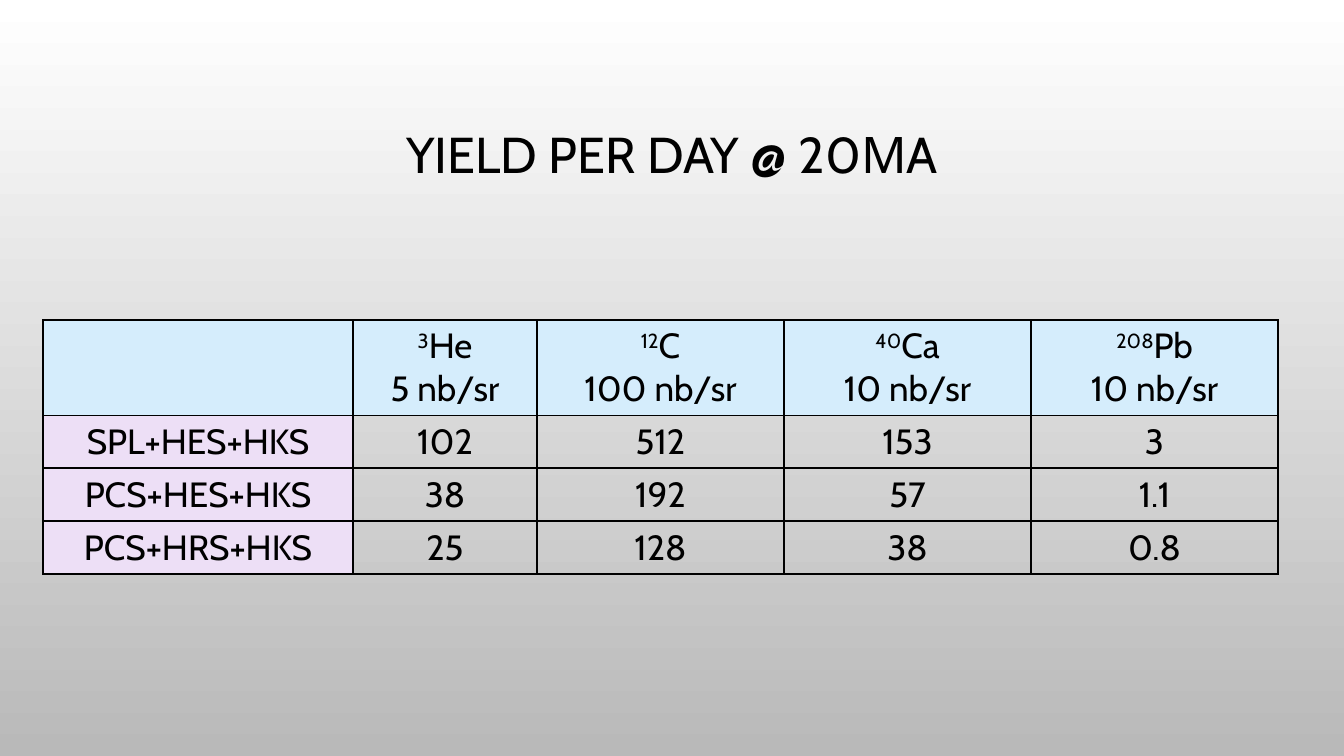
"""Build the slide on yield per day for four targets."""
from lxml.etree import SubElement
from pptx import Presentation
from pptx.dml.color import RGBColor
from pptx.enum.text import MSO_ANCHOR, PP_ALIGN
from pptx.oxml.ns import qn
from pptx.util import Emu, Pt

SLIDE_WIDTH, SLIDE_HEIGHT = 1344, 756
EMU_PER_PX = 12192000 / SLIDE_WIDTH
FONT = "Cabin"
BLACK = "000000"
HEADER_FILL, LABEL_FILL = "D5EDFC", "EDDFF6"
COLUMN_WIDTHS = [310, 184, 247, 247, 247]
HEADER_HEIGHT, ROW_HEIGHT = 95, 53
TARGETS = [
    ("3", "He", "5 nb/sr"),
    ("12", "C", "100 nb/sr"),
    ("40", "Ca", "10 nb/sr"),
    ("208", "Pb", "10 nb/sr"),
]
YIELDS = [
    ("SPL+HES+HKS", "102", "512", "153", "3"),
    ("PCS+HES+HKS", "38", "192", "57", "1.1"),
    ("PCS+HRS+HKS", "25", "128", "38", "0.8"),
]


def px(length):
    return Emu(round(length * EMU_PER_PX))


def color(value):
    return RGBColor.from_string(value)


def format_paragraph(paragraph, size):
    paragraph.alignment = PP_ALIGN.CENTER
    paragraph.font.size = Pt(size)
    paragraph.font.name = FONT
    paragraph.font.color.rgb = color(BLACK)


def set_background(slide):
    fill = slide.background.fill
    fill.gradient()
    fill.gradient_angle = 270
    for stop, value in zip(fill.gradient_stops, ("FFFFFF", "B9B9B9")):
        stop.color.rgb = color(value)


def set_title(slide, text):
    title = slide.shapes.title
    title.left, title.top, title.width, title.height = px(101), px(69), px(1142), px(176)
    frame = title.text_frame
    frame.text = text
    frame.vertical_anchor = MSO_ANCHOR.MIDDLE
    frame.paragraphs[0].line_spacing = 0.9
    format_paragraph(frame.paragraphs[0], 36)


def set_borders(cell):
    properties = cell._tc.get_or_add_tcPr()
    for side in ("a:lnL", "a:lnR", "a:lnT", "a:lnB"):
        line = SubElement(properties, qn(side), w=str(Pt(1)))
        SubElement(SubElement(line, qn("a:solidFill")), qn("a:srgbClr"), val=BLACK)


def style_cell(cell, fill=None):
    set_borders(cell)
    if fill:
        cell.fill.solid()
        cell.fill.fore_color.rgb = color(fill)
    else:
        cell.fill.background()
    cell.vertical_anchor = MSO_ANCHOR.MIDDLE
    for paragraph in cell.text_frame.paragraphs:
        format_paragraph(paragraph, 25)


def write_target(cell, mass, element, cross_section):
    frame = cell.text_frame
    superscript = frame.paragraphs[0].add_run()
    superscript.text = mass
    superscript._r.get_or_add_rPr().set("baseline", "30000")
    frame.paragraphs[0].add_run().text = element
    frame.add_paragraph().text = cross_section


def add_yield_table(slide):
    height = HEADER_HEIGHT + ROW_HEIGHT * len(YIELDS)
    table = slide.shapes.add_table(
        len(YIELDS) + 1, len(COLUMN_WIDTHS),
        px(43), px(320), px(sum(COLUMN_WIDTHS)), px(height),
    ).table
    table.first_row = table.horz_banding = False
    for column, width in zip(table.columns, COLUMN_WIDTHS):
        column.width = px(width)
    for index, row in enumerate(table.rows):
        row.height = px(ROW_HEIGHT if index else HEADER_HEIGHT)

    for index, target in enumerate(TARGETS, 1):
        write_target(table.cell(0, index), *target)
    for index in range(len(COLUMN_WIDTHS)):
        style_cell(table.cell(0, index), HEADER_FILL)
    for row_index, values in enumerate(YIELDS, 1):
        for column_index, value in enumerate(values):
            cell = table.cell(row_index, column_index)
            cell.text = value
            style_cell(cell, None if column_index else LABEL_FILL)


def main():
    presentation = Presentation()
    presentation.slide_width, presentation.slide_height = px(SLIDE_WIDTH), px(SLIDE_HEIGHT)
    slide = presentation.slides.add_slide(presentation.slide_layouts[5])
    set_background(slide)
    set_title(slide, "YIELD PER DAY @ 20ΜA")
    add_yield_table(slide)
    presentation.save("out.pptx")


if __name__ == "__main__":
    main()
